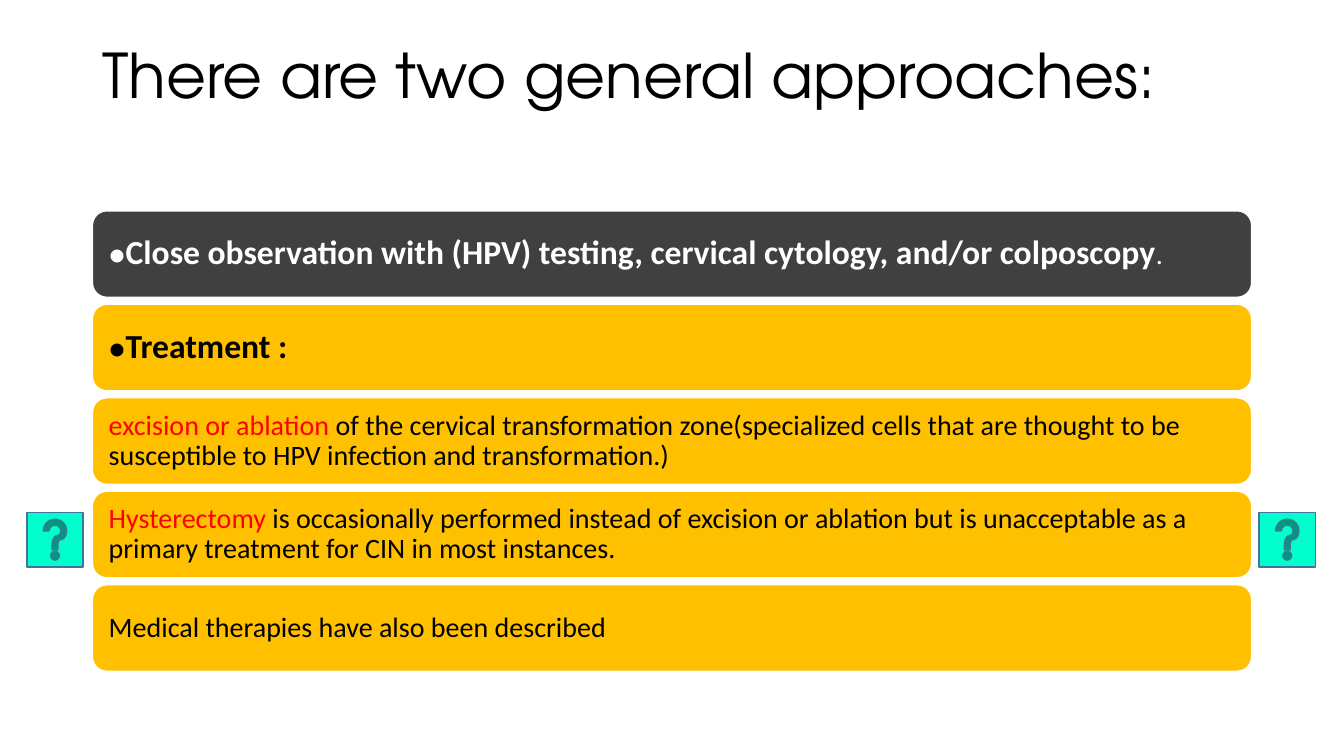
from dataclasses import dataclass

from pptx import Presentation
from pptx.dml.color import RGBColor
from pptx.enum.shapes import MSO_SHAPE as Preset
from pptx.enum.text import MSO_ANCHOR as Anchor, PP_ALIGN as Align
from pptx.util import Inches, Pt


@dataclass(frozen=True)
class Theme:
    heading_font: str = "TeX Gyre Adventor"
    body_font: str = "Calibri"
    title_size: int = 44
    lead_size: int = 24
    body_size: int = 20
    black: str = "000000"
    white: str = "FFFFFF"
    red: str = "FF0000"
    charcoal: str = "404040"
    amber: str = "FFC000"
    aqua: str = "00FFCC"
    steel: str = "43739E"


THEME = Theme()
COLUMNS, ROWS = 160, 90
BAR_LEFT, BAR_WIDTH = 11, 138
BAR_TOP, BAR_HEIGHT, BAR_PITCH = 25.1, 10.3, 11.13


def add_run(paragraph, text, *, size=THEME.body_size, color=THEME.black, font=THEME.body_font, bold=False):
    run = paragraph.add_run()
    run.text = text
    run.font.size = Pt(size)
    run.font.name = font
    run.font.bold = bold
    run.font.color.rgb = RGBColor.from_string(color)


class SlideBuilder:
    def __init__(self, presentation, theme):
        self.theme = theme
        self.slide = presentation.slides.add_slide(presentation.slide_layouts[6])
        self.column = presentation.slide_width / COLUMNS
        self.row = presentation.slide_height / ROWS

    def place(self, left, top, width, height):
        return (round(left * self.column), round(top * self.row),
                round(width * self.column), round(height * self.row))

    def paragraph(self, shape, anchor, inset_x, inset_y):
        frame = shape.text_frame
        frame.word_wrap = True
        frame.vertical_anchor = anchor
        frame.margin_left = frame.margin_right = Inches(inset_x)
        frame.margin_top = frame.margin_bottom = Inches(inset_y)
        paragraph = frame.paragraphs[0]
        paragraph.alignment = Align.LEFT
        paragraph.line_spacing = 0.9
        return paragraph

    def title(self, text):
        box = self.slide.shapes.add_textbox(*self.place(BAR_LEFT, 4.8, BAR_WIDTH, 17.4))
        paragraph = self.paragraph(box, Anchor.TOP, 0.1, 0.05)
        add_run(paragraph, text, size=self.theme.title_size, font=self.theme.heading_font)

    def shape(self, preset, position, fill, line):
        shape = self.slide.shapes.add_shape(preset, *self.place(*position))
        shape.shadow.inherit = False
        shape.fill.solid()
        shape.fill.fore_color.rgb = RGBColor.from_string(fill)
        shape.line.color.rgb = RGBColor.from_string(line)
        shape.line.width = Pt(1)
        return shape

    def bar(self, index, fill, runs):
        position = (BAR_LEFT, BAR_TOP + index * BAR_PITCH, BAR_WIDTH, BAR_HEIGHT)
        bar = self.shape(Preset.ROUNDED_RECTANGLE, position, fill, self.theme.white)
        paragraph = self.paragraph(bar, Anchor.MIDDLE, 0.12, 0.12)
        for text, style in runs:
            add_run(paragraph, text, **style)

    def help_button(self, left):
        self.shape(Preset.ACTION_BUTTON_HELP, (left, 61, 6.7, 6.5),
                   self.theme.aqua, self.theme.steel)


def main():
    presentation = Presentation()
    presentation.slide_width = Inches(13.33)
    presentation.slide_height = Inches(7.5)
    builder = SlideBuilder(presentation, THEME)
    builder.title("There are two general approaches:")

    plain = {}
    highlight = {"color": THEME.red}
    light = {"color": THEME.white}
    lead = {"size": THEME.lead_size, "bold": True}
    approaches = [
        (THEME.charcoal, [
            ("●", light),
            ("Close observation with (HPV) testing, cervical cytology, and/or colposcopy", lead | light),
            (".", light),
        ]),
        (THEME.amber, [("●", plain), ("Treatment :", lead)]),
        (THEME.amber, [
            ("excision or ablation ", highlight),
            ("of the cervical transformation zone(specialized cells that are thought to be "
             "susceptible to HPV infection and transformation.)", plain),
        ]),
        (THEME.amber, [
            ("Hysterectomy", highlight),
            (" is occasionally performed instead of excision or ablation but is unacceptable "
             "as a primary treatment for CIN in most instances.", plain),
        ]),
        (THEME.amber, [("Medical therapies have also been described", plain)]),
    ]
    for index, (fill, runs) in enumerate(approaches):
        builder.bar(index, fill, runs)

    for left in (3.2, 149.9):
        builder.help_button(left)

    presentation.save("out.pptx")


if __name__ == "__main__":
    main()
